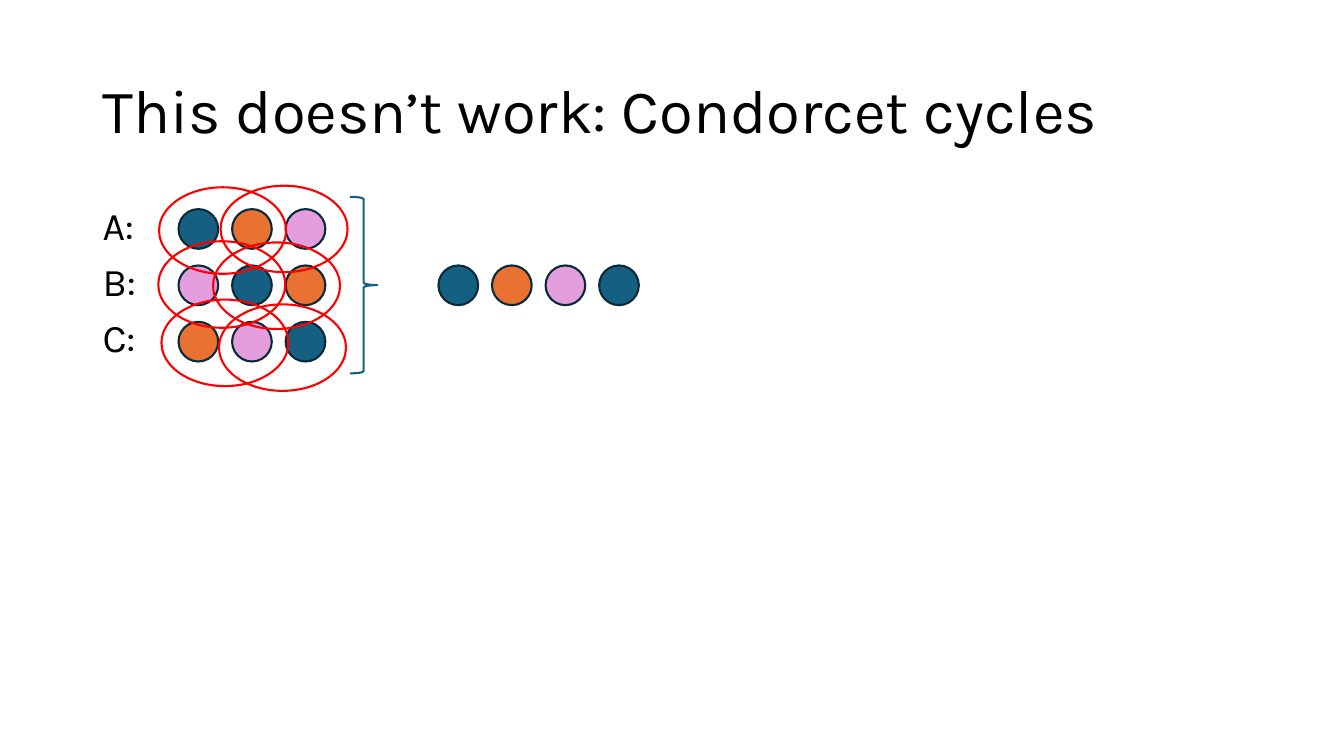
"""Build a slide showing how three rankings form a Condorcet cycle."""
from pptx import Presentation
from pptx.dml.color import RGBColor
from pptx.enum.shapes import MSO_SHAPE as Preset
from pptx.enum.text import MSO_ANCHOR as Anchor, MSO_AUTO_SIZE as AutoSize, PP_ALIGN as Align
from pptx.oxml.ns import qn
from pptx.util import Cm, Pt

TITLE = "This doesn’t work: Condorcet cycles"
BLUE, ORANGE, PINK = "156082", "E97132", "E59EDD"
OUTLINE, RED, BLACK = "092A39", "FF0000", "000000"
RANKINGS = {
    "A:": (BLUE, ORANGE, PINK),
    "B:": (PINK, BLUE, ORANGE),
    "C:": (ORANGE, PINK, BLUE),
}
CYCLE = (BLUE, ORANGE, PINK, BLUE)
PAIR_RINGS = [(4.01, 4.72), (5.56, 4.68), (3.99, 6.08), (5.37, 6.11), (4.07, 7.55), (5.52, 7.67)]
RING_WIDTH, RING_HEIGHT = 3.2, 2.18
DOT_SIZE, DOT_STEP, ROW_STEP = 1, 1.35, 1.42
RANKING_LEFT, RANKING_TOP, CYCLE_LEFT = 4.5, 5.27, 11.05


def color(hex_string):
    return RGBColor.from_string(hex_string)


def write(placeholder, text, box, size, anchor, space_before=0):
    placeholder.left, placeholder.top, placeholder.width, placeholder.height = map(Cm, box)
    frame = placeholder.text_frame
    frame.text = text
    frame.auto_size = AutoSize.NONE
    frame.vertical_anchor = anchor
    for paragraph in frame.paragraphs:
        paragraph.alignment = Align.LEFT
        paragraph.line_spacing = 0.9
        paragraph.space_before = Pt(space_before)
        properties = paragraph._p.get_or_add_pPr()
        properties.set("marL", "0")
        properties.set("indent", "0")
        properties.append(properties.makeelement(qn("a:buNone"), {}))
        font = paragraph.runs[0].font
        font.name, font.size = "Karla", Pt(size)
        font.color.rgb = color(BLACK)


def draw(slide, preset, box, line, fill=None):
    shape = slide.shapes.add_shape(preset, *map(Cm, box))
    shape.shadow.inherit = False
    shape.line.color.rgb = color(line)
    shape.line.width = Pt(1.5)
    if fill:
        shape.fill.solid()
        shape.fill.fore_color.rgb = color(fill)
    else:
        shape.fill.background()


def draw_dots(slide, colors, left, top):
    for column, fill in enumerate(colors):
        draw(slide, Preset.OVAL, (left + column * DOT_STEP, top, DOT_SIZE, DOT_SIZE), OUTLINE, fill)


def main():
    presentation = Presentation()
    presentation.slide_width, presentation.slide_height = Cm(33.87), Cm(19.05)
    slide = presentation.slides.add_slide(presentation.slide_layouts[1])
    title, body = slide.placeholders
    write(title, TITLE, (2.33, 1.01, 29.21, 3.68), 44, Anchor.MIDDLE)
    write(body, "\n".join(RANKINGS), (2.33, 5.07, 29.21, 12.09), 28, Anchor.TOP, space_before=10)

    for row, colors in enumerate(RANKINGS.values()):
        draw_dots(slide, colors, RANKING_LEFT, RANKING_TOP + row * ROW_STEP)
    draw(slide, Preset.RIGHT_BRACE, (8.82, 4.96, 0.69, 4.45), BLUE)
    draw_dots(slide, CYCLE, CYCLE_LEFT, RANKING_TOP + ROW_STEP)
    for left, top in PAIR_RINGS:
        draw(slide, Preset.OVAL, (left, top, RING_WIDTH, RING_HEIGHT), RED)
    presentation.save("out.pptx")


if __name__ == "__main__":
    main()
